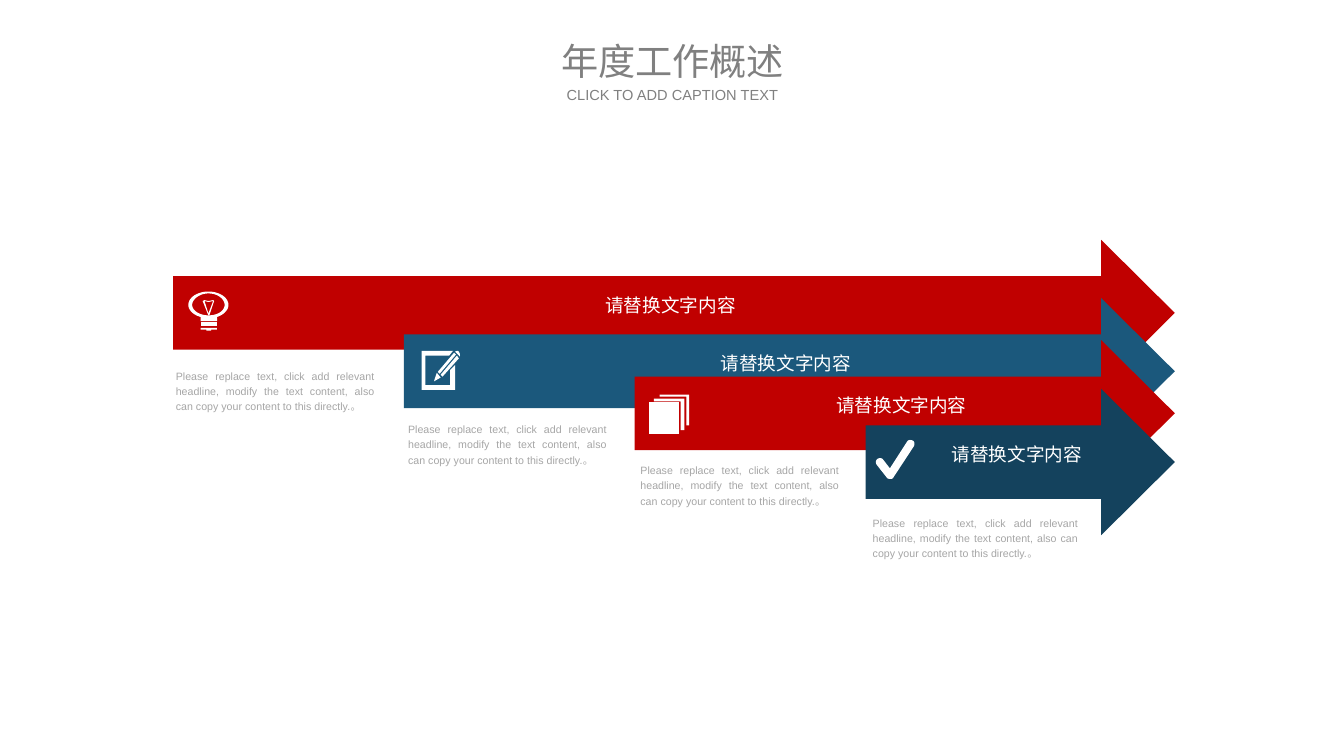
"""Build the annual work overview slide with four stacked arrows."""
import pptx
import pptx.dml.color
import pptx.enum.text
import pptx.util

ALIGN = pptx.enum.text.PP_ALIGN
MIDDLE = pptx.enum.text.MSO_ANCHOR.MIDDLE
TOP = pptx.enum.text.MSO_ANCHOR.TOP
GROW = pptx.enum.text.MSO_AUTO_SIZE.SHAPE_TO_FIT_TEXT
Inches = pptx.util.Inches

THEME = {
    "font": "Arial",
    "red": "C00000", "blue": "1B587C", "navy": "14425D",
    "white": "FFFFFF", "title": "808080", "note": "A6A6A6",
    "title_size": 28, "caption_size": 11, "label_size": 14, "note_size": 8,
}
HEADINGS = [
    ("年度工作概述", "title_size", 0.39, 0.49),
    ("CLICK TO ADD CAPTION TEXT", "caption_size", 0.9, 0.19),
]
LABEL = "请替换文字内容"
NOTE = ("Please replace text, click add relevant headline, modify the text content, "
        "also can copy your content to this directly.。")
ARROWS = [
    {"color": "red", "top": 2.51, "note_top": 3.79, "note_width": 2.3},
    {"color": "blue", "top": 3.12, "note_top": 4.35, "note_width": 2.3},
    {"color": "red", "top": 3.56, "note_top": 4.78, "note_width": 2.3},
    {"color": "navy", "top": 4.07, "note_top": 5.33, "note_width": 2.37},
]
ARROW_LEFT, ARROW_STEP = 1.81, 2.415
HEAD_LEFT, TIP, HEAD_HEIGHT, SHAFT_INSET = 11.52, 12.29, 1.53, 0.38
NOTE_LEFT, NOTE_STEP, NOTE_HEIGHT = 1.73, 2.43, 0.58
LABEL_INSETS = (0.59, 0.41, 0.66, 0.62)
NOTE_INSETS = (0.11, 0.05, 0.11, 0.05)

# Icons hold shapes, shapes hold contours; pairs are corners, sextets are cubic curves.
BULB = [
    [[(2.39, 3.19), (2.39, 3.11, 2.29, 3.05, 2.18, 3.05), (2.07, 3.05, 1.97, 3.11, 1.97, 3.19),
      (1.97, 3.25, 2.03, 3.3, 2.11, 3.32), (2.1, 3.32), (2.1, 3.36), (2.27, 3.36), (2.27, 3.32),
      (2.26, 3.32), (2.33, 3.3, 2.39, 3.25, 2.39, 3.19)],
     [(2.18, 3.3), (2.09, 3.3, 2.01, 3.25, 2.01, 3.19), (2.01, 3.13, 2.09, 3.07, 2.18, 3.07),
      (2.28, 3.07, 2.35, 3.13, 2.35, 3.19), (2.35, 3.25, 2.28, 3.3, 2.18, 3.3)]],
    [[(2.1, 3.37), (2.27, 3.37), (2.27, 3.41), (2.1, 3.41)]],
    [[(2.1, 3.43), (2.27, 3.43), (2.27, 3.45), (2.21, 3.45), (2.21, 3.46), (2.16, 3.46),
      (2.16, 3.45), (2.1, 3.45)]],
    [[(2.24, 3.15), (2.23, 3.14), (2.18, 3.15), (2.14, 3.14), (2.12, 3.15), (2.18, 3.3),
      (2.19, 3.3)],
     [(2.18, 3.28), (2.14, 3.15), (2.18, 3.16), (2.23, 3.15)]],
]
PENCIL = [
    [[(4.61, 3.95), (4.57, 3.9), (4.54, 3.99)]],
    [[(4.75, 3.69), (4.58, 3.89), (4.6, 3.91), (4.77, 3.71)]],
    [[(4.61, 3.92), (4.63, 3.94), (4.8, 3.75), (4.78, 3.72)]],
    [[(4.8, 3.68), (4.79, 3.66, 4.76, 3.68, 4.76, 3.68), (4.81, 3.73),
      (4.81, 3.73, 4.82, 3.71, 4.8, 3.68)]],
    [[(4.71, 4.03), (4.45, 4.03), (4.45, 3.72), (4.7, 3.72), (4.74, 3.67), (4.41, 3.67),
      (4.41, 4.08), (4.76, 4.08), (4.76, 3.82), (4.71, 3.87)]],
]
PAGES = [
    [[(6.84, 4.2), (7.12, 4.2), (7.12, 4.5), (7.16, 4.5), (7.16, 4.17), (6.84, 4.17)]],
    [[(6.9, 4.13), (6.9, 4.15), (7.18, 4.15), (7.18, 4.45), (7.21, 4.45), (7.21, 4.13)]],
    [[(6.79, 4.21), (6.79, 4.54), (7.1, 4.54), (7.1, 4.21)]],
]
CHECK = [
    [[(9.31, 5.01), (9.3, 5.01, 9.29, 5.01, 9.28, 5), (9.17, 4.86),
      (9.16, 4.84, 9.16, 4.82, 9.18, 4.8), (9.2, 4.79, 9.23, 4.79, 9.24, 4.81), (9.31, 4.9),
      (9.49, 4.62), (9.5, 4.6, 9.53, 4.6, 9.55, 4.61), (9.57, 4.62, 9.57, 4.65, 9.56, 4.67),
      (9.35, 4.99), (9.34, 5.01, 9.33, 5.01, 9.32, 5.01)]],
]
ICONS = [CHECK, PAGES, BULB, PENCIL]


def rgb(name):
    return pptx.dml.color.RGBColor.from_string(THEME[name])


def flatten(contour, pieces=10):
    points = [contour[0]]
    for step in contour[1:]:
        if len(step) == 2:
            points.append(step)
            continue
        controls = [points[-1], step[:2], step[2:4], step[4:]]
        for index in range(1, pieces + 1):
            t = index / pieces
            weights = ((1 - t) ** 3, 3 * t * (1 - t) ** 2, 3 * t * t * (1 - t), t ** 3)
            points.append(tuple(sum(w * c[axis] for w, c in zip(weights, controls))
                                for axis in (0, 1)))
    return [(Inches(x), Inches(y)) for x, y in points]


def draw_outline(shapes, contours, color):
    first, *others = [flatten(contour) for contour in contours]
    builder = shapes.build_freeform(*first[0])
    builder.add_line_segments(first[1:], close=True)
    for points in others:
        builder.move_to(*points[0])
        builder.add_line_segments(points[1:], close=True)
    shape = builder.convert_to_shape()
    shape.shadow.inherit = False
    shape.fill.solid()
    shape.fill.fore_color.rgb = rgb(color)
    shape.line.fill.background()
    return shape


def write(shape, text, size, color, insets=(0, 0, 0, 0), align=ALIGN.CENTER,
          spacing=None, **frame_format):
    frame = shape.text_frame
    sides = ("margin_left", "margin_top", "margin_right", "margin_bottom")
    frame_format.update(zip(sides, map(Inches, insets)), word_wrap=True)
    para = frame.paragraphs[0]
    span = para.add_run()
    span.text = text
    formats = [
        (frame, frame_format),
        (para, {"alignment": align, "line_spacing": spacing}),
        (span.font, {"name": THEME["font"], "size": pptx.util.Pt(THEME[size])}),
    ]
    for target, values in formats:
        for name, value in values.items():
            setattr(target, name, value)
    span.font.color.rgb = rgb(color)


def add_box(page, left, top, width, height):
    return page.shapes.add_textbox(*map(Inches, (left, top, width, height)))


def arrow_outline(left, top):
    bottom = top + HEAD_HEIGHT
    shaft_top, shaft_bottom = top + SHAFT_INSET, bottom - SHAFT_INSET
    return [(left, shaft_top), (HEAD_LEFT, shaft_top), (HEAD_LEFT, top),
            (TIP, (top + bottom) / 2), (HEAD_LEFT, bottom),
            (HEAD_LEFT, shaft_bottom), (left, shaft_bottom)]


def main():
    deck = pptx.Presentation()
    deck.slide_width, deck.slide_height = Inches(14.06), Inches(7.91)
    page = deck.slides.add_slide(deck.slide_layouts[6])

    for index, arrow in enumerate(ARROWS):
        box = add_box(page, NOTE_LEFT + index * NOTE_STEP, arrow["note_top"],
                      arrow["note_width"], NOTE_HEIGHT)
        write(box, NOTE, "note_size", "note", NOTE_INSETS, ALIGN.JUSTIFY, 1.2,
              vertical_anchor=TOP, auto_size=GROW)

    for index, arrow in enumerate(ARROWS):
        outline = arrow_outline(ARROW_LEFT + index * ARROW_STEP, arrow["top"])
        shape = draw_outline(page.shapes, [outline], arrow["color"])
        write(shape, LABEL, "label_size", "white", LABEL_INSETS, spacing=1.2,
              vertical_anchor=MIDDLE)

    for icon in ICONS:
        group = page.shapes.add_group_shape()
        for contours in icon:
            draw_outline(group.shapes, contours, "white")

    for text, size, top, height in HEADINGS:
        box = add_box(page, 5.77, top, 2.53, height)
        write(box, text, size, "title", vertical_anchor=MIDDLE, auto_size=GROW)

    deck.save("out.pptx")


if __name__ == "__main__":
    main()
